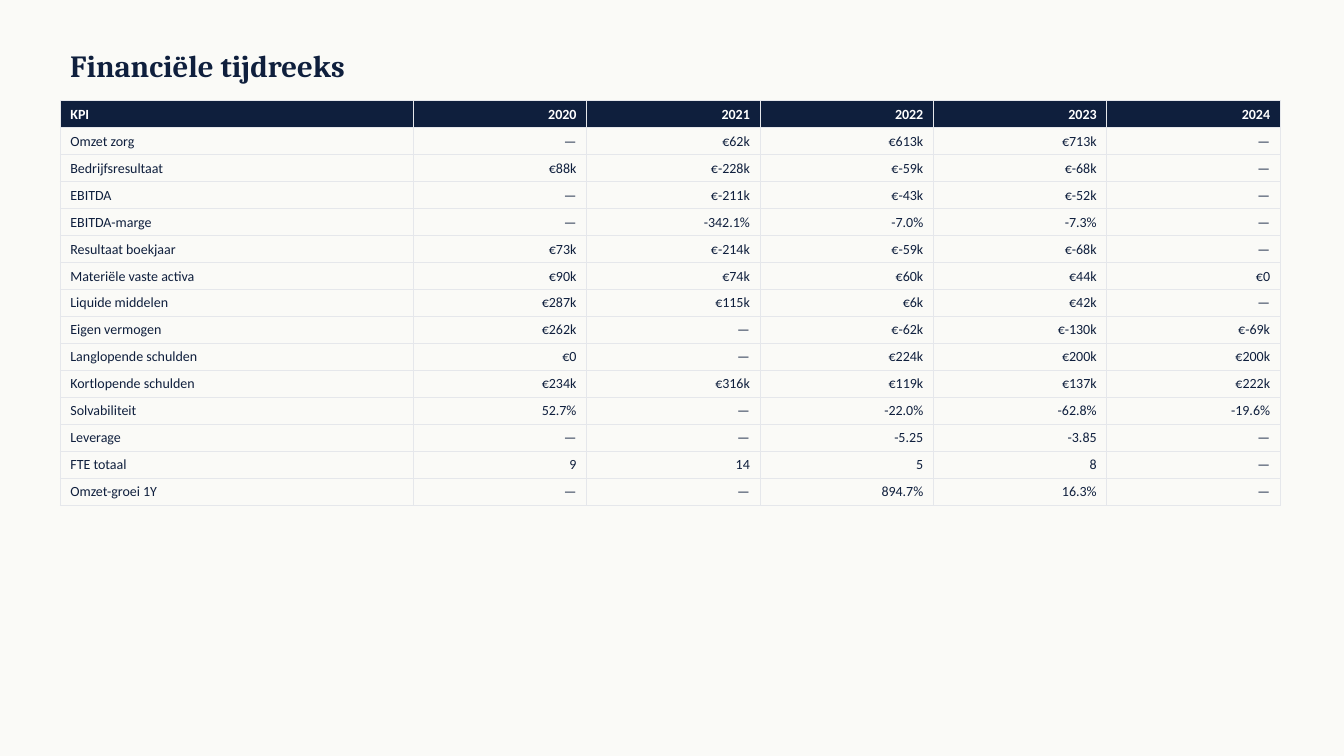
from lxml.etree import SubElement
from pptx import Presentation
from pptx.dml.color import RGBColor
from pptx.enum.text import MSO_ANCHOR as Anchor, PP_ALIGN as Align
from pptx.oxml.ns import qn
from pptx.util import Cm, Pt

TITLE = "Financiële tijdreeks"
YEARS = ("KPI", "2020", "2021", "2022", "2023", "2024")
KPIS = [
    ("Omzet zorg", "—", "€62k", "€613k", "€713k", "—"),
    ("Bedrijfsresultaat", "€88k", "€-228k", "€-59k", "€-68k", "—"),
    ("EBITDA", "—", "€-211k", "€-43k", "€-52k", "—"),
    ("EBITDA-marge", "—", "-342.1%", "-7.0%", "-7.3%", "—"),
    ("Resultaat boekjaar", "€73k", "€-214k", "€-59k", "€-68k", "—"),
    ("Materiële vaste activa", "€90k", "€74k", "€60k", "€44k", "€0"),
    ("Liquide middelen", "€287k", "€115k", "€6k", "€42k", "—"),
    ("Eigen vermogen", "€262k", "—", "€-62k", "€-130k", "€-69k"),
    ("Langlopende schulden", "€0", "—", "€224k", "€200k", "€200k"),
    ("Kortlopende schulden", "€234k", "€316k", "€119k", "€137k", "€222k"),
    ("Solvabiliteit", "52.7%", "—", "-22.0%", "-62.8%", "-19.6%"),
    ("Leverage", "—", "—", "-5.25", "-3.85", "—"),
    ("FTE totaal", "9", "14", "5", "8", "—"),
    ("Omzet-groei 1Y", "—", "—", "894.7%", "16.3%", "—"),
]

NAVY, WHITE, PAPER, RULE = "0F1F3D", "FFFFFF", "FAFAF7", "E5E7EB"
TITLE_FONT = {"name": "Cambria", "size": Pt(22), "bold": True}
YEAR_FONT = {"name": "Calibri", "size": Pt(10), "bold": True}
KPI_FONT = {**YEAR_FONT, "bold": False}
LEFT, KPI_WIDTH, YEAR_WIDTH, ROW_HEIGHT = Cm(1.52), Cm(8.89), Cm(4.37), Cm(0.68)


def paint(color_format, color):
    color_format.rgb = RGBColor.from_string(color)


def write(frame, text, font_values, color, align=Align.LEFT):
    paragraph = frame.paragraphs[0]
    paragraph.alignment = align
    run = paragraph.add_run()
    run.text = text
    for attribute, value in font_values.items():
        setattr(run.font, attribute, value)
    paint(run.font.color, color)


def outline(cell):
    properties = cell._tc.get_or_add_tcPr()
    for side in ("lnL", "lnR", "lnT", "lnB"):
        line = SubElement(properties, qn(f"a:{side}"), w=str(Pt(0.5)))
        SubElement(SubElement(line, qn("a:solidFill")), qn("a:srgbClr"), val=RULE)


def add_title(slide):
    frame = slide.shapes.add_textbox(LEFT, Cm(1.02), Cm(30.48), Cm(1.27)).text_frame
    frame.word_wrap = True
    frame.vertical_anchor = Anchor.MIDDLE
    write(frame, TITLE, TITLE_FONT, NAVY)


def add_series(slide):
    rows = [YEARS, *KPIS]
    widths = [KPI_WIDTH] + [YEAR_WIDTH] * (len(YEARS) - 1)
    series = slide.shapes.add_table(
        len(rows), len(widths), LEFT, Cm(2.54), sum(widths), ROW_HEIGHT * len(rows)
    ).table
    series.horz_banding = False
    for column, width in zip(series.columns, widths):
        column.width = width
    for r, row in enumerate(rows):
        for c, text in enumerate(row):
            cell = series.cell(r, c)
            outline(cell)
            if r == 0:
                cell.fill.solid()
                paint(cell.fill.fore_color, NAVY)
            else:
                cell.fill.background()
            font_values, color = (KPI_FONT, NAVY) if r else (YEAR_FONT, WHITE)
            align = Align.RIGHT if c else Align.LEFT
            write(cell.text_frame, text, font_values, color, align)


def main():
    deck = Presentation()
    deck.slide_width, deck.slide_height = Cm(33.87), Cm(19.05)
    slide = deck.slides.add_slide(deck.slide_layouts[6])
    slide.background.fill.solid()
    paint(slide.background.fill.fore_color, PAPER)
    add_title(slide)
    add_series(slide)
    deck.save("out.pptx")


if __name__ == "__main__":
    main()
